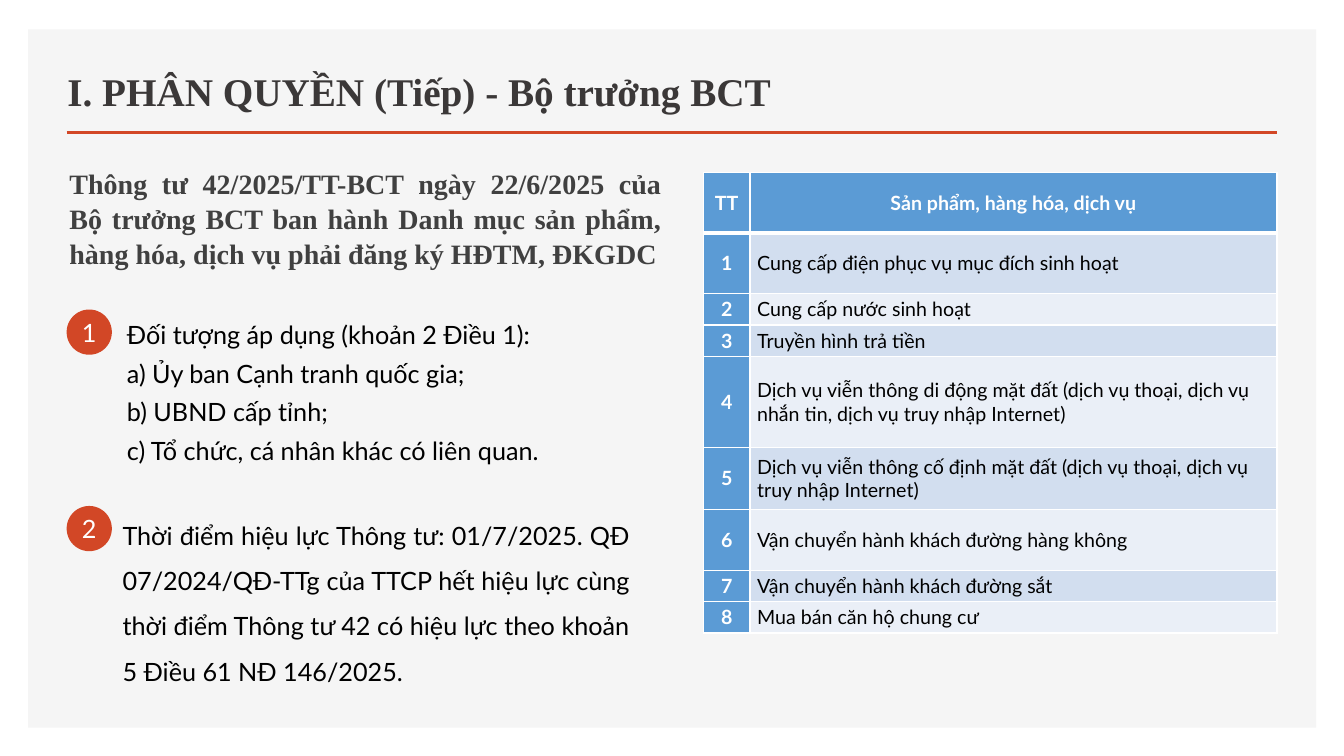
from lxml.etree import SubElement
from pptx import Presentation
from pptx.dml.color import RGBColor
from pptx.enum.shapes import MSO_CONNECTOR, MSO_SHAPE
from pptx.enum.text import MSO_ANCHOR, PP_ALIGN
from pptx.oxml.ns import qn
from pptx.util import Cm, Pt

TITLE = "I. PHÂN QUYỀN (Tiếp) - Bộ trưởng BCT"
LEAD = (
    "Thông tư 42/2025/TT-BCT ngày 22/6/2025 của Bộ trưởng BCT ban hành "
    "Danh mục sản phẩm, hàng hóa, dịch vụ phải đăng ký HĐTM, ĐKGDC"
)
SCOPE = [
    "Đối tượng áp dụng (khoản 2 Điều 1):",
    "a) Ủy ban Cạnh tranh quốc gia;",
    "b) UBND cấp tỉnh;",
    "c) Tổ chức, cá nhân khác có liên quan.",
]
DATES = [
    "Thời điểm hiệu lực Thông tư: 01/7/2025. QĐ 07/2024/QĐ-TTg của TTCP "
    "hết hiệu lực cùng thời điểm Thông tư 42 có hiệu lực theo khoản 5 "
    "Điều 61 NĐ 146/2025."
]
POINTS = [
    {"lines": SCOPE, "dot": 7.8, "box": (2.95, 7.92, 13.28, 2.13), "gap": 3, "lead": None},
    {"lines": DATES, "dot": 12.75, "box": (2.84, 12.6, 13.28, 1.57), "gap": 6, "lead": 1.5},
]
HEAD = ("TT", "Sản phẩm, hàng hóa, dịch vụ")
GOODS = [
    ("Cung cấp điện phục vụ mục đích sinh hoạt", 1.53),
    ("Cung cấp nước sinh hoạt", 0.79),
    ("Truyền hình trả tiền", 0.79),
    ("Dịch vụ viễn thông di động mặt đất (dịch vụ thoại, dịch vụ nhắn tin, "
     "dịch vụ truy nhập Internet)", 2.29),
    ("Dịch vụ viễn thông cố định mặt đất (dịch vụ thoại, dịch vụ truy nhập "
     "Internet)", 1.57),
    ("Vận chuyển hành khách đường hàng không", 1.53),
    ("Vận chuyển hành khách đường sắt", 0.79),
    ("Mua bán căn hộ chung cư", 0.79),
]
COLS = (1.17, 13.28)
HEAD_H = 1.53
LEFT, RIGHT, RULE_Y, DOT = 1.68, 32.18, 3.33, 1.14
SERIF, SANS = "Times New Roman", "Lato"
HUES = {
    "panel": "F5F5F5", "accent": "D24726", "title": "3B3838", "lead": "404040",
    "ink": "000000", "white": "FFFFFF", "blue": "5B9BD5",
    "odd": "D2DEEF", "even": "EAEFF7",
}


def hue(name):
    return RGBColor.from_string(HUES[name])


def write(frame, lines, size=18, font=SANS, color="ink", bold=False,
          align=PP_ALIGN.LEFT, gap=0, lead=None, anchor=MSO_ANCHOR.TOP):
    frame.word_wrap = True
    frame.vertical_anchor = anchor
    for i, line in enumerate(lines):
        para = frame.add_paragraph() if i else frame.paragraphs[0]
        para.alignment = align
        para.space_before = para.space_after = Pt(gap)
        para.line_spacing = lead
        run = para.add_run()
        run.text = line
        run.font.size, run.font.name, run.font.bold = Pt(size), font, bold
        run.font.color.rgb = hue(color)


def add_text(box, lines, **form):
    shape = slide.shapes.add_textbox(*map(Cm, box))
    write(shape.text_frame, lines, **form)


def add_form(kind, box, fill):
    shape = slide.shapes.add_shape(kind, *map(Cm, box))
    shape.shadow.inherit = False
    shape.fill.solid()
    shape.fill.fore_color.rgb = hue(fill)
    shape.line.fill.background()
    return shape


def set_edges(cell, base):
    props = cell._tc.get_or_add_tcPr()
    for i, (side, width) in enumerate((("L", 1), ("R", 1), ("T", 1), ("B", base))):
        edge = props.makeelement(qn("a:ln" + side), {"w": str(Pt(width))})
        fill = SubElement(edge, qn("a:solidFill"))
        SubElement(fill, qn("a:srgbClr"), val=HUES["white"])
        props.insert(i, edge)


def fill_cell(cell, text, fill, base=1, **form):
    cell.fill.solid()
    cell.fill.fore_color.rgb = hue(fill)
    cell.margin_left = cell.margin_right = Cm(0.18)
    cell.margin_top = cell.margin_bottom = 0
    cell.vertical_anchor = MSO_ANCHOR.MIDDLE
    write(cell.text_frame, [text], size=14, gap=4, anchor=None, **form)
    set_edges(cell, base)


def add_goods():
    highs = [HEAD_H] + [high for _, high in GOODS]
    box = (17.73, 4.34, sum(COLS), sum(highs))
    grid = slide.shapes.add_table(len(highs), len(COLS), *map(Cm, box)).table
    for col, wide in zip(grid.columns, COLS):
        col.width = Cm(wide)
    for row, high in zip(grid.rows, highs):
        row.height = Cm(high)
    label = {"color": "white", "bold": True, "align": PP_ALIGN.CENTER}
    for i, text in enumerate(HEAD):
        fill_cell(grid.cell(0, i), text, "blue", base=3, **label)
    for i, (text, _) in enumerate(GOODS, 1):
        fill_cell(grid.cell(i, 0), str(i), "blue", **label)
        fill_cell(grid.cell(i, 1), text, "odd" if i % 2 else "even")


deck = Presentation()
deck.slide_width, deck.slide_height = Cm(33.87), Cm(19.05)
slide = deck.slides.add_slide(deck.slide_layouts[6])

add_form(MSO_SHAPE.RECTANGLE, (0.71, 0.74, 32.46, 17.6), "panel")
rule = slide.shapes.add_connector(
    MSO_CONNECTOR.STRAIGHT, Cm(LEFT), Cm(RULE_Y), Cm(RIGHT), Cm(RULE_Y))
rule.line.color.rgb = hue("accent")
rule.line.width = Pt(2)
SubElement(rule._element.spPr, qn("a:effectLst"))

add_text((1.45, 1.24, 19.1, 1.78), [TITLE], size=28, font=SERIF, color="title",
         bold=True, anchor=MSO_ANCHOR.BOTTOM)
add_text((1.5, 4.04, 15.42, 1.32), [LEAD], size=20, font=SERIF, color="lead",
         bold=True, align=PP_ALIGN.JUSTIFY, gap=6, lead=Pt(25))

for i, point in enumerate(POINTS, 1):
    dot = add_form(MSO_SHAPE.OVAL, (LEFT, point["dot"], DOT, DOT), "accent")
    frame = dot.text_frame
    frame.margin_left = frame.margin_right = 0
    frame.margin_top = frame.margin_bottom = 0
    write(frame, [str(i)], color="white", align=PP_ALIGN.CENTER,
          anchor=MSO_ANCHOR.MIDDLE)
    add_text(point["box"], point["lines"], align=PP_ALIGN.JUSTIFY,
             gap=point["gap"], lead=point["lead"])

add_goods()
deck.save("out.pptx")
